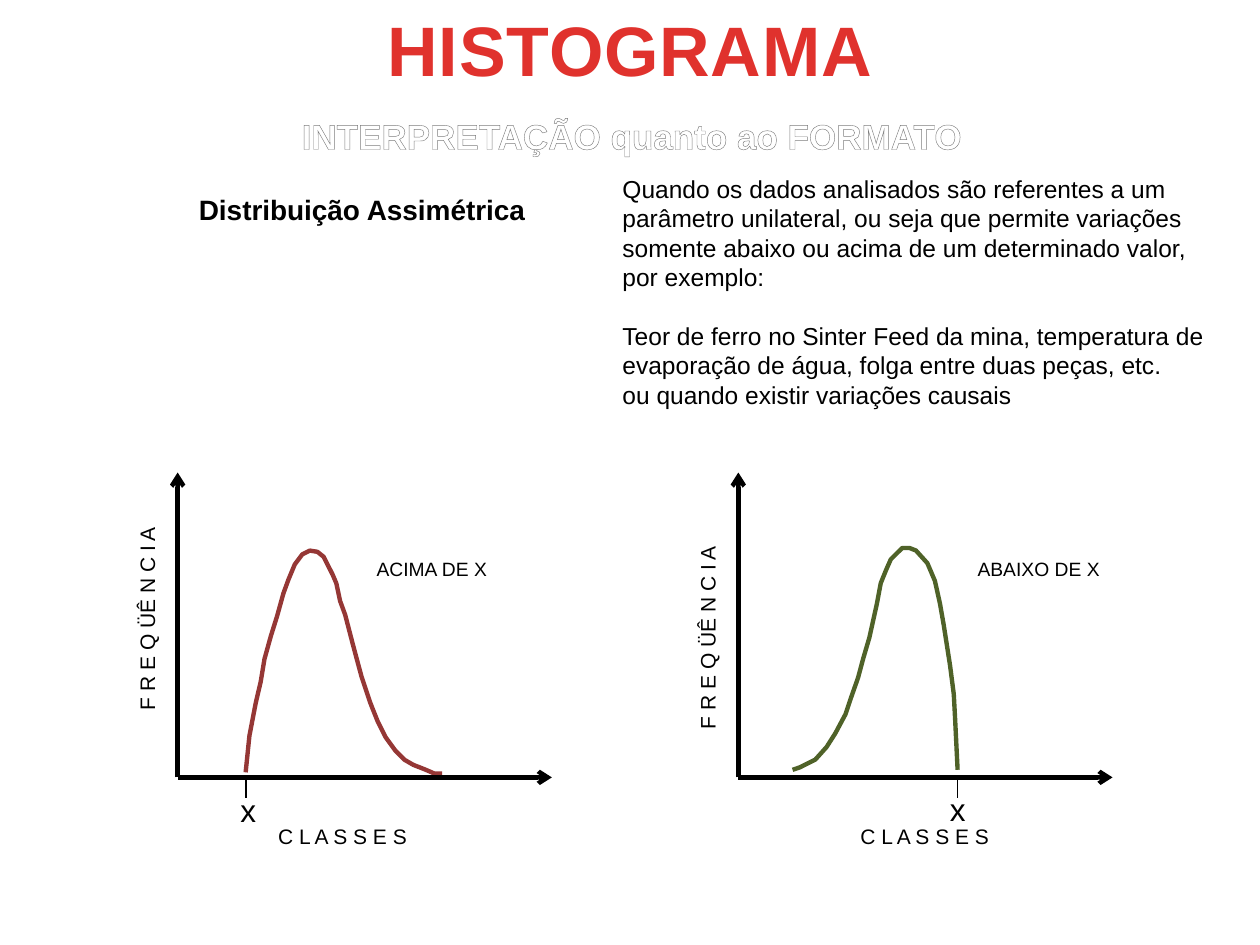
"""Build a slide on asymmetric histograms with two one-sided distribution curves."""
from lxml import etree
from pptx import Presentation
from pptx.dml.color import RGBColor
from pptx.enum.shapes import MSO_CONNECTOR
from pptx.enum.text import MSO_ANCHOR, MSO_AUTO_SIZE, PP_ALIGN
from pptx.oxml.ns import qn
from pptx.util import Inches, Pt

STRAIGHT = MSO_CONNECTOR.STRAIGHT
TOP = MSO_ANCHOR.TOP
NO_FIT = MSO_AUTO_SIZE.NONE
LEFT, CENTER = PP_ALIGN.LEFT, PP_ALIGN.CENTER
BLACK = RGBColor(0x00, 0x00, 0x00)
WHITE = RGBColor(0xFF, 0xFF, 0xFF)
TITLE_RED = RGBColor(0xE0, 0x32, 0x2D)
CURVE_RED = RGBColor(0x95, 0x37, 0x35)
CURVE_GREEN = RGBColor(0x4F, 0x62, 0x28)
OUTLINE_GRAY = RGBColor(0x7D, 0x7D, 0x7D)

deck = Presentation()
deck.slide_width, deck.slide_height = Inches(10), Inches(7.5)
COL, ROW = deck.slide_width // 1000, deck.slide_height // 750
page = deck.slides.add_slide(deck.slide_layouts[1])


def write(box, area, lines, size, color=BLACK, bold=False, align=LEFT, wrap=False):
    """Place a text shape on the grid and fill it with formatted lines."""
    left, top, width, height = area
    box.left, box.top = left * COL, top * ROW
    box.width, box.height = width * COL, height * ROW
    frame = box.text_frame
    frame.text = "\n".join(lines)
    frame.word_wrap, frame.auto_size, frame.vertical_anchor = wrap, NO_FIT, TOP
    for para in frame.paragraphs:
        props = para._p.get_or_add_pPr()
        props.set("marL", "0")
        props.set("indent", "0")
        para.alignment = align
        para.space_before = Pt(0)
        etree.SubElement(props, qn("a:buNone"))
        para.font.name, para.font.size, para.font.bold = "Arial", Pt(size), bold
        para.font.color.rgb = color
    return frame.paragraphs


def draw_line(start, end, width, arrow=False):
    """Draw a black straight line between two grid points."""
    line = page.shapes.add_connector(
        STRAIGHT, start[0] * COL, start[1] * ROW, end[0] * COL, end[1] * ROW)
    line.line.color.rgb = BLACK
    line.line.width = Pt(width)
    if arrow:
        etree.SubElement(line.line._get_or_add_ln(), qn("a:tailEnd"), type="arrow")
    etree.SubElement(line._element.spPr, qn("a:effectLst"))


title = write(page.shapes.title, (250, 0, 500, 78), ["HISTOGRAMA"], 40,
              TITLE_RED, True, CENTER, True)
title[0].runs[0].font._element.set("spc", "50")

body = write(page.placeholders[1], (484, 133, 484, 199), [
    "Quando os dados analisados são referentes a um",
    "parâmetro unilateral, ou seja que permite variações",
    "somente abaixo ou acima de um determinado valor,",
    "por exemplo:",
    "Teor de ferro no Sinter Feed da mina, temperatura de",
    "evaporação de água, folga entre duas peças, etc.",
    "ou quando existir variações causais",
], 14)
body[4].space_before = Pt(16.8)

heading = page.shapes.add_textbox(0, 0, COL, ROW)
write(heading, (148, 148, 375, 37), ["Distribuição Assimétrica"], 16, bold=True, wrap=True)

subtitle = page.shapes.add_textbox(0, 0, COL, ROW)
span = write(subtitle, (227, 86, 549, 44), ["INTERPRETAÇÃO quanto ao FORMATO"], 20,
             WHITE, True, CENTER)[0].runs[0]
span.font.color.rgb = WHITE
outline = etree.Element(qn("a:ln"), w="10541")
outline_fill = etree.SubElement(outline, qn("a:solidFill"))
etree.SubElement(outline_fill, qn("a:srgbClr"), val=str(OUTLINE_GRAY))
span.font._element.insert(0, outline)

ABOVE_CURVE = [
    (195, 613), (198, 584), (203, 558), (207, 541), (210, 523), (215, 505), (220, 489),
    (225, 471), (229, 460), (234, 448), (240, 440), (246, 437), (252, 438), (257, 442),
    (264, 456), (267, 463), (270, 477), (274, 488), (280, 511), (284, 526), (287, 537),
    (294, 558), (300, 573), (306, 585), (314, 596), (321, 603), (328, 607), (338, 611),
    (345, 614), (351, 614)]
BELOW_CURVE = [
    (629, 611), (635, 609), (647, 603), (656, 593), (663, 582), (671, 567), (675, 555),
    (681, 538), (685, 523), (690, 506), (696, 479), (699, 463), (703, 453), (707, 444),
    (711, 440), (716, 435), (722, 435), (727, 437), (736, 447), (742, 461), (744, 470),
    (746, 479), (749, 496), (754, 528), (757, 551), (758, 570), (760, 611)]
BASE, AXIS_TOP, AXIS_LENGTH = 617, 375, 297

panels = [
    (141, ABOVE_CURVE, CURVE_RED, 195, [
        ("C L A S S E S", (211, 649, 124, 30), 12, 0),
        ("F R E Q ÜÊ N C I A", (33, 475, 167, 30), 12, 270),
        ("x", (181, 623, 33, 40), 18, 0),
        ("ACIMA DE X", (289, 437, 109, 29), 11, 0)]),
    (586, BELOW_CURVE, CURVE_GREEN, 760, [
        ("C L A S S E S", (673, 649, 124, 30), 12, 0),
        ("F R E Q ÜÊ N C I A", (478, 490, 167, 30), 12, 270),
        ("x", (744, 622, 33, 40), 18, 0),
        ("ABAIXO DE X", (766, 437, 118, 29), 11, 0)]),
]
for origin, points, color, limit, labels in panels:
    builder = page.shapes.build_freeform(*points[0], scale=COL)
    builder.add_line_segments(points[1:], close=False)
    curve = builder.convert_to_shape()
    curve.shadow.inherit = False
    curve.fill.background()
    curve.line.color.rgb = color
    curve.line.width = Pt(2.5)
    draw_line((origin, BASE), (origin + AXIS_LENGTH, BASE), 2.5, True)
    draw_line((origin, BASE), (origin, AXIS_TOP), 2.5, True)
    draw_line((limit, BASE), (limit, BASE + 16), 1)
    for text, area, size, angle in labels:
        label = page.shapes.add_textbox(0, 0, COL, ROW)
        write(label, area, [text], size)
        label.rotation = angle

deck.save("out.pptx")
